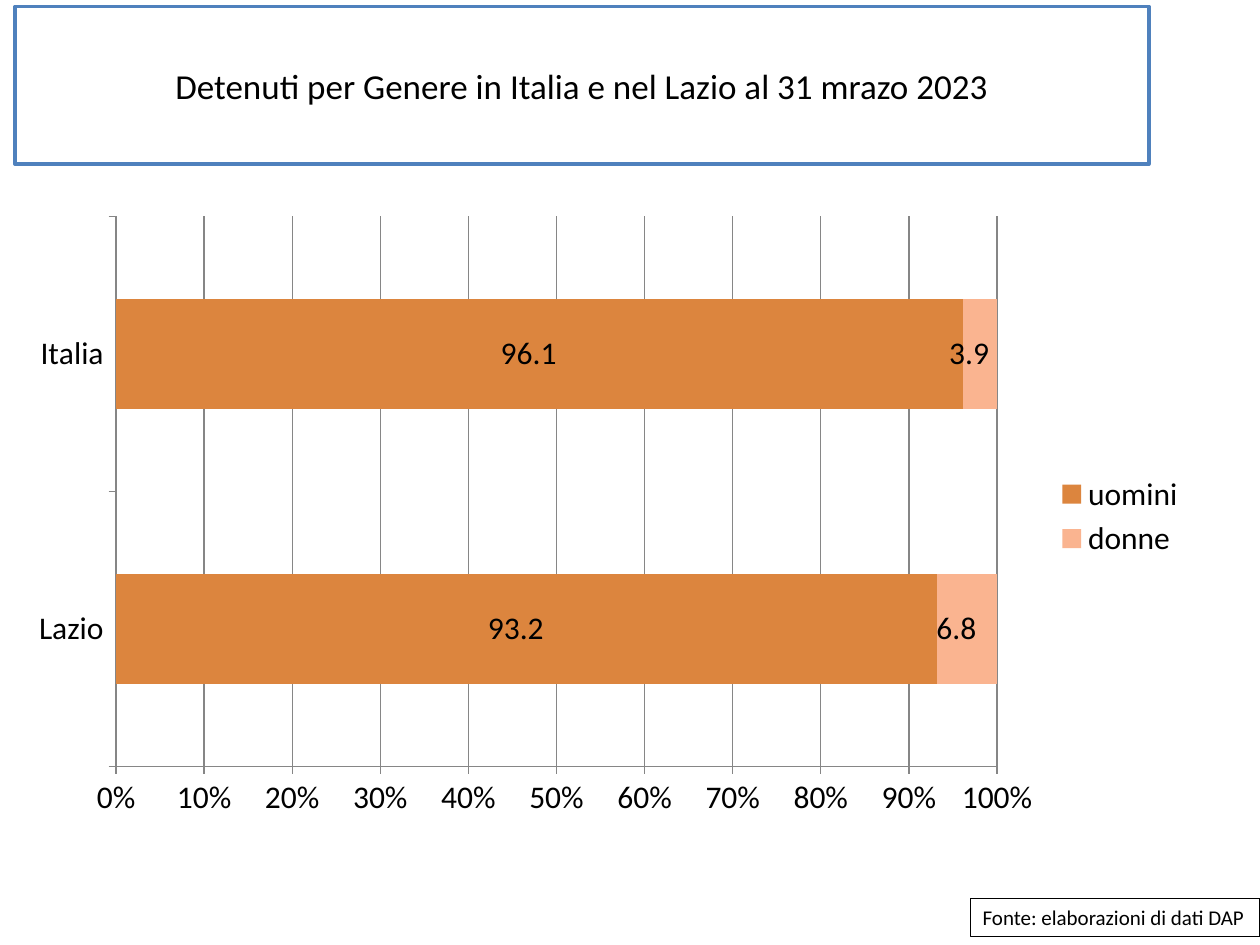
from dataclasses import dataclass
from typing import Any

from lxml.etree import SubElement
from pptx import Presentation
from pptx.chart.data import CategoryChartData
from pptx.dml.color import RGBColor
from pptx.enum.chart import XL_CHART_TYPE as ChartType
from pptx.enum.chart import XL_LABEL_POSITION as LabelPosition
from pptx.enum.chart import XL_LEGEND_POSITION as LegendPosition
from pptx.enum.chart import XL_TICK_MARK as TickMark
from pptx.enum.text import MSO_ANCHOR as Anchor
from pptx.enum.text import MSO_AUTO_SIZE as AutoSize
from pptx.enum.text import PP_ALIGN as Align
from pptx.oxml.ns import qn
from pptx.util import Cm, Pt

FONT = "Calibri"
BLACK = "000000"
WHITE = "FFFFFF"
GREY = "868686"
NUMBER_FORMAT = r"_-* #,##0.0\ _€_-;\-* #,##0.0\ _€_-"


@dataclass
class Frame:
    left: float
    top: float
    width: float
    height: float

    def lengths(self) -> tuple:
        return Cm(self.left), Cm(self.top), Cm(self.width), Cm(self.height)


@dataclass
class Caption:
    text: str
    frame: Frame
    size: float
    border: str
    border_width: float
    align: Any
    layout: dict


@dataclass
class Gender:
    name: str
    shares: tuple
    color: str


TITLE = Caption(
    "Detenuti per Genere in Italia e nel Lazio al 31 mrazo 2023",
    Frame(0.3, 0.13, 22.86, 3.18), 20, "4F81BD", 2, Align.CENTER,
    {"word_wrap": True, "auto_size": AutoSize.NONE, "vertical_anchor": Anchor.MIDDLE},
)
SOURCE = Caption(
    "Fonte: elaborazioni di dati DAP",
    Frame(19.56, 18.11, 5.84, 0.77), 12, BLACK, 0.75, Align.LEFT,
    {"word_wrap": False, "auto_size": AutoSize.SHAPE_TO_FIT_TEXT},
)
CHART_FRAME = Frame(0.3, 4.11, 24, 12.6)
PLOT_AREA = {"x": 0.085, "y": 0.02, "w": 0.74, "h": 0.88}
REGIONS = ("Lazio", "Italia")
GENDERS = (
    Gender("uomini ", (93.2, 96.1), "DC853E"),
    Gender("donne", (6.8, 3.9), "FAB490"),
)


def rgb(value: str) -> RGBColor:
    return RGBColor.from_string(value)


def apply(target: Any, values: dict) -> None:
    for name, value in values.items():
        setattr(target, name, value)


def paint(target: Any, color: str) -> None:
    target.solid()
    target.fore_color.rgb = rgb(color)


def style_font(font: Any, size: float) -> None:
    apply(font, {"name": FONT, "size": Pt(size), "bold": False})
    font.color.rgb = rgb(BLACK)


def style_line(line: Any, color: str, width: float) -> None:
    line.color.rgb = rgb(color)
    line.width = Pt(width)


def draw_caption(box: Any, caption: Caption) -> None:
    left, top, width, height = caption.frame.lengths()
    apply(box, {"left": left, "top": top, "width": width, "height": height})
    paint(box.fill, WHITE)
    style_line(box.line, caption.border, caption.border_width)
    apply(box.text_frame, caption.layout)
    para = box.text_frame.paragraphs[0]
    para.alignment = caption.align
    span = para.add_run()
    span.text = caption.text
    style_font(span.font, caption.size)


def place_plot(chart: Any) -> None:
    area = chart.element.chart.plotArea
    layout = area.find(qn("c:layout"))
    if layout is None:
        layout = SubElement(area, qn("c:layout"))
        area.insert(0, layout)
    manual = SubElement(layout, qn("c:manualLayout"))
    settings = {"layoutTarget": "inner", "xMode": "edge", "yMode": "edge", **PLOT_AREA}
    for name, value in settings.items():
        SubElement(manual, qn(f"c:{name}")).set("val", str(value))


def draw_chart(page: Any) -> None:
    data = CategoryChartData()
    data.categories = REGIONS
    for gender in GENDERS:
        data.add_series(gender.name, gender.shares)
    chart = page.shapes.add_chart(
        ChartType.BAR_STACKED_100, *CHART_FRAME.lengths(), data
    ).chart
    style_font(chart.font, 18)
    apply(chart, {"has_title": False, "has_legend": True})
    apply(chart.legend, {"position": LegendPosition.RIGHT, "include_in_layout": False})
    place_plot(chart)

    plot = chart.plots[0]
    apply(plot, {"gap_width": 150, "overlap": 100, "vary_by_categories": False})
    for series, gender in zip(plot.series, GENDERS):
        paint(series.format.fill, gender.color)
        labels = series.data_labels
        apply(labels, {
            "show_value": True,
            "position": LabelPosition.CENTER,
            "number_format": NUMBER_FORMAT,
            "number_format_is_linked": False,
        })
        style_font(labels.font, 18)

    for axis in (chart.category_axis, chart.value_axis):
        apply(axis, {"major_tick_mark": TickMark.OUTSIDE, "minor_tick_mark": TickMark.NONE})
        style_line(axis.format.line, GREY, 0.75)
    chart.category_axis.has_major_gridlines = False
    apply(chart.value_axis, {
        "minimum_scale": 0, "maximum_scale": 1, "major_unit": 0.1,
        "has_major_gridlines": True,
    })
    apply(chart.value_axis.tick_labels, {
        "number_format": "0%", "number_format_is_linked": False,
    })
    style_line(chart.value_axis.major_gridlines.format.line, GREY, 0.75)


def main() -> None:
    deck = Presentation()
    apply(deck, {"slide_width": Cm(25.4), "slide_height": Cm(19.05)})
    page = deck.slides.add_slide(deck.slide_layouts[5])
    draw_caption(page.shapes.title, TITLE)
    draw_caption(page.shapes.add_textbox(*SOURCE.frame.lengths()), SOURCE)
    draw_chart(page)
    deck.save("out.pptx")


if __name__ == "__main__":
    main()
